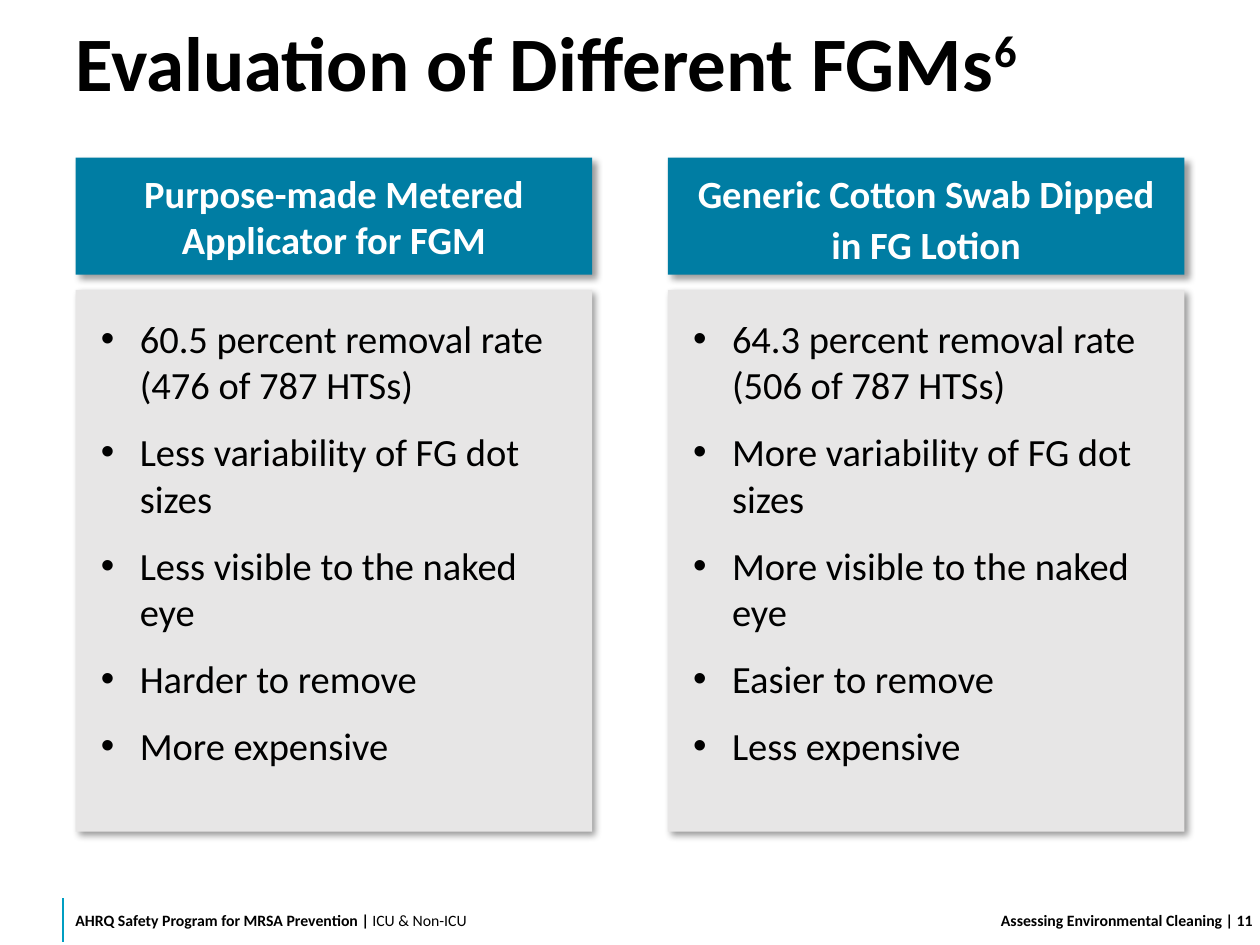
from dataclasses import dataclass

import pptx
import pptx.dml.color
import pptx.enum.shapes
import pptx.enum.text
import pptx.oxml
import pptx.util
from pptx.util import Inches

Align = pptx.enum.text.PP_ALIGN
Anchor = pptx.enum.text.MSO_ANCHOR
A_NS = 'xmlns:a="http://schemas.openxmlformats.org/drawingml/2006/main"'
FONT = "Calibri"
BLACK, WHITE, TEAL, GRAY, CYAN = "000000", "FFFFFF", "007DA3", "E7E6E6", "009EC2"
INDENT = 0.31


@dataclass
class Column:
    left: float
    header_idx: int
    header: str
    header_spacing: float
    body_idx: int
    bullets: list[str]
    right_inset: float


@dataclass
class FooterText:
    box: tuple[float, float, float, float]
    insets: tuple[float, float, float, float]
    align: Align
    runs: list[tuple[str, bool]]


COLUMNS = [
    Column(0.6, 1, "Purpose-made Metered Applicator for FGM", 1.0, 2,
           ["60.5 percent removal rate (476 of 787 HTSs)",
            "Less variability of FG dot sizes",
            "Less visible to the naked eye",
            "Harder to remove",
            "More expensive"], 0.2),
    Column(5.3, 3, "Generic Cotton Swab Dipped in FG Lotion", 1.1, 4,
           ["64.3 percent removal rate (506 of 787 HTSs)",
            "More variability of FG dot sizes",
            "More visible to the naked eye",
            "Easier to remove",
            "Less expensive"], 0.1),
]

FOOTER = [
    FooterText((0.5, 7.1, 4.1, 0.4), (0.1, 0, 0.1, 0), Align.LEFT,
               [("AHRQ Safety Program for MRSA Prevention | ", True),
                ("ICU & Non-ICU", False)]),
    FooterText((7.1, 7.1, 2.6, 0.4), (0.1, 0.05, 0, 0.05), Align.RIGHT,
               [("Assessing Environmental Cleaning", True)]),
    FooterText((9.7, 7.1, 0.3, 0.4), (0, 0.05, 0, 0.05), Align.LEFT,
               [(" | 11", True)]),
]


def rgb(value: str) -> pptx.dml.color.RGBColor:
    return pptx.dml.color.RGBColor.from_string(value)


def set_attrs(obj, values: dict) -> None:
    for name, value in values.items():
        setattr(obj, name, value)


def place(sp, left: float, top: float, width: float, height: float) -> None:
    set_attrs(sp, {"left": Inches(left), "top": Inches(top),
                   "width": Inches(width), "height": Inches(height)})


def set_frame(tf, insets: tuple, anchor: Anchor) -> None:
    sides = ("margin_left", "margin_top", "margin_right", "margin_bottom")
    set_attrs(tf, {side: Inches(v) for side, v in zip(sides, insets)})
    set_attrs(tf, {"word_wrap": True, "vertical_anchor": anchor,
                   "auto_size": pptx.enum.text.MSO_AUTO_SIZE.NONE})


def set_paragraph(p, align: Align, spacing: float = 1.0, before: float = 0) -> None:
    set_attrs(p, {"alignment": align, "line_spacing": spacing,
                  "space_before": pptx.util.Pt(before),
                  "space_after": pptx.util.Pt(0)})


def add_run(p, text: str, size: float, color: str = BLACK, bold: bool = False):
    r = p.add_run()
    r.text = text
    set_attrs(r.font, {"name": FONT, "size": pptx.util.Pt(size), "bold": bold})
    r.font.color.rgb = rgb(color)
    return r


def add_bullet(p) -> None:
    pPr = p._p.get_or_add_pPr()
    pPr.set("marL", str(Inches(INDENT)))
    pPr.set("indent", str(-Inches(INDENT)))
    pPr.append(pptx.oxml.parse_xml(f'<a:buFont {A_NS} typeface="Arial"/>'))
    pPr.append(pptx.oxml.parse_xml(f'<a:buChar {A_NS} char="•"/>'))


def style_panel(sp, fill: str) -> None:
    """Solid fill, no outline, soft shadow to the lower right."""
    sp.fill.solid()
    sp.fill.fore_color.rgb = rgb(fill)
    sp.line.fill.background()
    sp._element.spPr.append(pptx.oxml.parse_xml(
        f'<a:effectLst {A_NS}><a:outerShdw blurRad="{pptx.util.Pt(4)}" '
        f'dist="{pptx.util.Pt(3)}" dir="2700000" algn="tl" rotWithShape="0">'
        f'<a:srgbClr val="{BLACK}"><a:alpha val="40000"/></a:srgbClr>'
        '</a:outerShdw></a:effectLst>'))


def fill_title(sp) -> None:
    place(sp, 0.5, 0, 9, 1)
    set_frame(sp.text_frame, (0.1, 0.1, 0.1, 0.05), Anchor.MIDDLE)
    p = sp.text_frame.paragraphs[0]
    set_paragraph(p, Align.LEFT, 0.9)
    add_run(p, "Evaluation of Different FGMs", 44, bold=True)
    r = add_run(p, "6", 44, bold=True)
    r._r.get_or_add_rPr().set("baseline", "30000")


def fill_column(s, col: Column) -> None:
    # Heading panel
    sp = s.placeholders[col.header_idx]
    place(sp, col.left, 1.25, 4.1, 0.93)
    style_panel(sp, TEAL)
    set_frame(sp.text_frame, (0.2, 0.05, 0.2, 0.05), Anchor.MIDDLE)
    p = sp.text_frame.paragraphs[0]
    set_paragraph(p, Align.CENTER, col.header_spacing)
    add_run(p, col.header, 22, WHITE, True)

    # Bullet panel
    sp = s.placeholders[col.body_idx]
    place(sp, col.left, 2.3, 4.1, 4.3)
    style_panel(sp, GRAY)
    tf = sp.text_frame
    set_frame(tf, (0.2, 0.2, col.right_inset, 0.2), Anchor.TOP)
    for i, text in enumerate(col.bullets):
        p = tf.add_paragraph() if i else tf.paragraphs[0]
        set_paragraph(p, Align.LEFT, before=12 if i else 0)
        add_bullet(p)
        add_run(p, text, 22)


def add_footer_text(s, item: FooterText) -> None:
    sp = s.shapes.add_textbox(*(Inches(v) for v in item.box))
    set_frame(sp.text_frame, item.insets, Anchor.MIDDLE)
    p = sp.text_frame.paragraphs[0]
    set_paragraph(p, item.align)
    for text, bold in item.runs:
        add_run(p, text, 9, bold=bold)


def add_footer_rule(s) -> None:
    line = s.shapes.add_connector(
        pptx.enum.shapes.MSO_CONNECTOR.STRAIGHT,
        Inches(0.5), Inches(7.13), Inches(0.5), Inches(7.48))
    line.line.color.rgb = rgb(CYAN)
    line.line.width = pptx.util.Pt(1)
    line._element.spPr.append(pptx.oxml.parse_xml(f"<a:effectLst {A_NS}/>"))


def main() -> None:
    prs = pptx.Presentation()
    set_attrs(prs, {"slide_width": Inches(10), "slide_height": Inches(7.5)})
    s = prs.slides.add_slide(prs.slide_layouts.get_by_name("Comparison"))

    # Title and the two compared columns
    fill_title(s.shapes.title)
    for col in COLUMNS:
        fill_column(s, col)

    # Footer
    add_footer_rule(s)
    for item in FOOTER:
        add_footer_text(s, item)

    prs.save("out.pptx")


if __name__ == "__main__":
    main()
